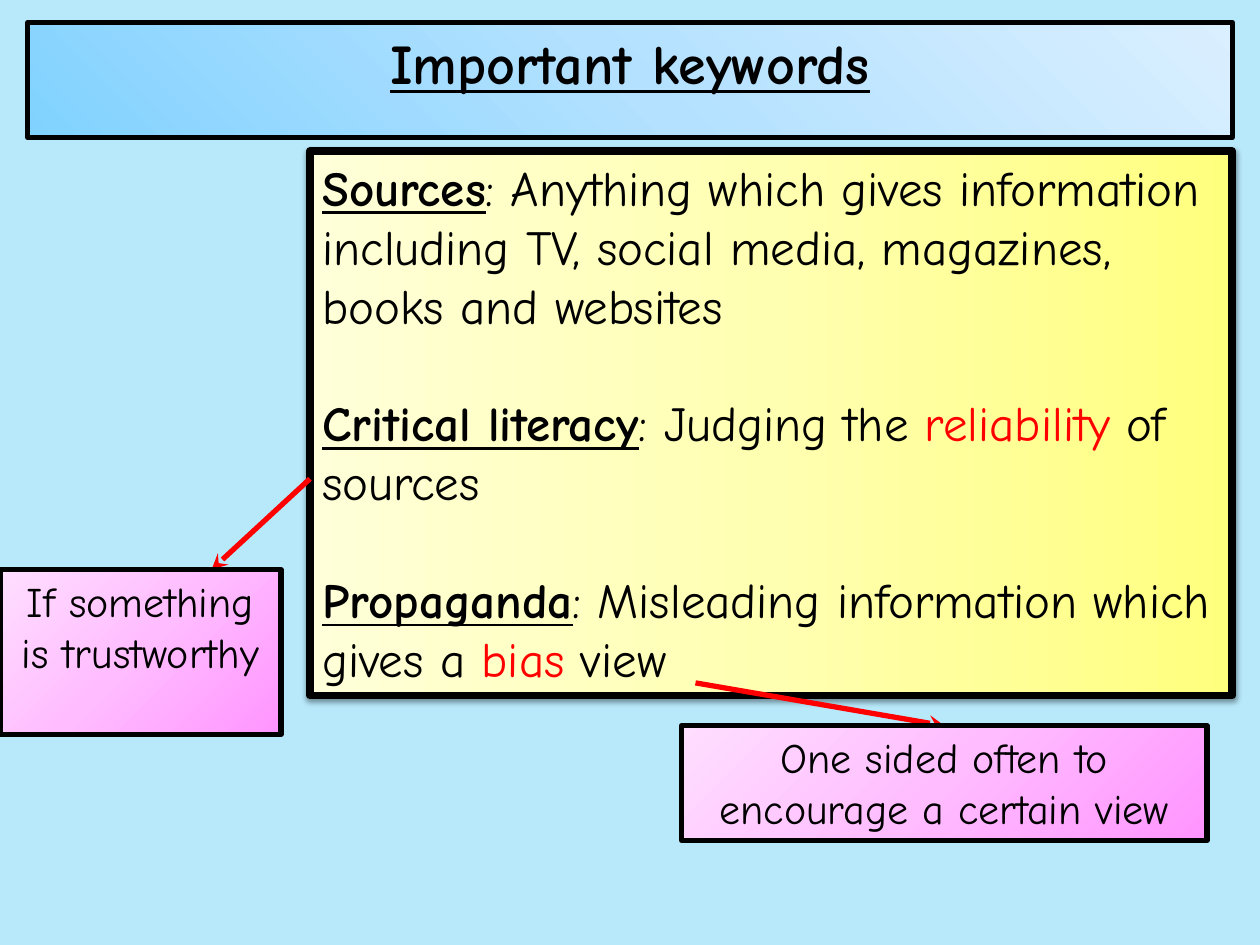
from lxml import etree
from pptx import Presentation
from pptx.dml.color import RGBColor
from pptx.enum.shapes import MSO_CONNECTOR, MSO_SHAPE
from pptx.enum.text import MSO_ANCHOR, PP_ALIGN
from pptx.oxml import parse_xml
from pptx.oxml.ns import qn
from pptx.util import Inches, Pt

RECTANGLE = MSO_SHAPE.RECTANGLE
STRAIGHT = MSO_CONNECTOR.STRAIGHT
TOP = MSO_ANCHOR.TOP
LEFT, CENTER = PP_ALIGN.LEFT, PP_ALIGN.CENTER

FONT = "Comic Neue"
NAMESPACE = 'xmlns:a="http://schemas.openxmlformats.org/drawingml/2006/main"'
SKY = RGBColor(0xB8, 0xE9, 0xFB)
BLACK = RGBColor(0, 0, 0)
RED = RGBColor(0xFF, 0, 0)
BLUES = [RGBColor(0x81, 0xD2, 0xFF), RGBColor(0xB3, 0xE1, 0xFF), RGBColor(0xDA, 0xEF, 0xFF)]
YELLOWS = [RGBColor(0xFF, 0xFF, 0x7E), RGBColor(0xFF, 0xFF, 0xB1), RGBColor(0xFF, 0xFF, 0xD9)]
PINKS = [RGBColor(0xFF, 0x94, 0xFF), RGBColor(0xFF, 0xBC, 0xFF), RGBColor(0xFF, 0xDE, 0xFF)]
FROM_RIGHT = '<a:lin ang="10800000" scaled="0"/>'
FROM_BOTTOM_LEFT = '<a:path path="circle"><a:fillToRect t="100000" r="100000"/></a:path>'
FROM_BOTTOM_RIGHT = '<a:path path="circle"><a:fillToRect l="100000" t="100000"/></a:path>'

deck = Presentation()
deck.slide_width, deck.slide_height = Inches(10), Inches(7.5)
page = deck.slides.add_slide(deck.slide_layouts[6])
page.background.fill.solid()
page.background.fill.fore_color.rgb = SKY


def add_box(left, top, width, height, colors, direction, line_width, size, align, paragraphs):
    box = page.shapes.add_shape(
        RECTANGLE, Inches(left), Inches(top), Inches(width), Inches(height))
    box.shadow.inherit = False
    box.line.color.rgb = BLACK
    box.line.width = Pt(line_width)
    box.fill.gradient()
    stops = "".join(
        f'<a:gs pos="{index * 50000}"><a:srgbClr val="{color}"/></a:gs>'
        for index, color in enumerate(colors))
    gradient = box.element.spPr.find(qn("a:gradFill"))
    gradient.getparent().replace(gradient, parse_xml(
        f'<a:gradFill {NAMESPACE} rotWithShape="1"><a:gsLst>{stops}</a:gsLst>{direction}</a:gradFill>'))
    frame = box.text_frame
    frame.word_wrap = True
    frame.vertical_anchor = TOP
    for index, spans in enumerate(paragraphs):
        para = frame.add_paragraph() if index else frame.paragraphs[0]
        para.alignment = align
        para.font.name = FONT
        para.font.size = Pt(size)
        if index:
            para.space_before = Pt(33.7)
        for text, color, is_keyword in spans:
            span = para.add_run()
            span.text = text
            span.font.color.rgb = color
            if is_keyword:
                span.font.bold = True
                span.font.underline = True
    return box


def add_arrow(start_x, start_y, end_x, end_y):
    arrow = page.shapes.add_connector(
        STRAIGHT, Inches(start_x), Inches(start_y), Inches(end_x), Inches(end_y))
    arrow.line.color.rgb = RED
    arrow.line.width = Pt(3)
    etree.SubElement(arrow.line._get_or_add_ln(), qn("a:tailEnd"), type="stealth")
    etree.SubElement(arrow.element.spPr, qn("a:effectLst"))
    return arrow


definitions = add_box(2.46, 1.2, 7.32, 4.32, YELLOWS, FROM_RIGHT, 4.5, 28, LEFT, [
    [("Sources", BLACK, True),
     (": Anything which gives information including TV, social media, magazines, "
      "books and websites", BLACK, False)],
    [("Critical literacy", BLACK, True), (": Judging the ", BLACK, False),
     ("reliability", RED, False), (" of sources", BLACK, False)],
    [("Propaganda", BLACK, True),
     (": Misleading information which gives a ", BLACK, False),
     ("bias ", RED, False), ("view", BLACK, False)],
])
definitions.element.spPr.find(qn("a:effectLst")).append(parse_xml(
    f'<a:outerShdw {NAMESPACE} blurRad="{Pt(3.1)}" dist="{Pt(1.6)}" dir="5400000" rotWithShape="0">'
    '<a:srgbClr val="000000"><a:alpha val="38000"/></a:srgbClr></a:outerShdw>'))

add_box(0.22, 0.18, 9.56, 0.91, BLUES, FROM_BOTTOM_LEFT, 3, 32, CENTER,
        [[("Important keywords", BLACK, True)]])

add_arrow(2.46, 3.8, 1.68, 4.52)
add_box(0, 4.52, 2.23, 1.31, PINKS, FROM_BOTTOM_RIGHT, 3, 24, CENTER,
        [[("If something is trustworthy", BLACK, False)]])

bias_arrow = add_arrow(5.52, 5.42, 7.49, 5.76)
bias_note = add_box(5.41, 5.76, 4.17, 0.91, PINKS, FROM_BOTTOM_RIGHT, 3, 24, CENTER,
                    [[("One sided often to encourage a certain view", BLACK, False)]])
bias_arrow.end_connect(bias_note, 0)

deck.save("out.pptx")
